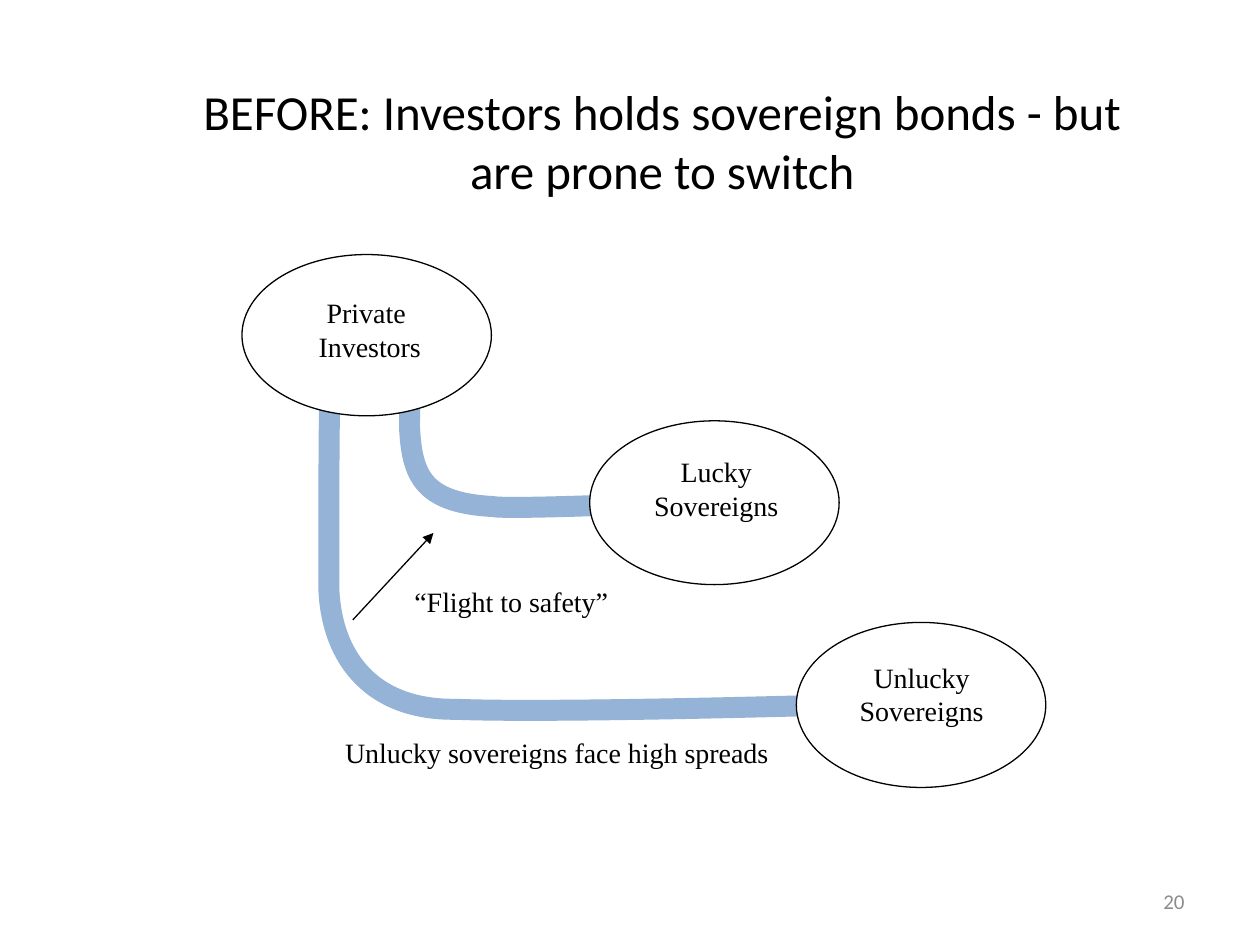
import dataclasses
import itertools

import lxml.etree
import pptx
import pptx.dml.color
import pptx.enum.shapes
import pptx.enum.text
import pptx.oxml.ns
import pptx.util

ALIGN = pptx.enum.text.PP_ALIGN
ANCHOR = pptx.enum.text.MSO_ANCHOR
qualified = pptx.oxml.ns.qn


def rgb(value):
    return pptx.dml.color.RGBColor.from_string(value)


@dataclasses.dataclass(frozen=True)
class Theme:
    ink: str = "000000"
    paper: str = "FFFFFF"
    pipe: str = "95B3D7"
    muted: str = "8C8C8C"
    heading_font: str = "Calibri"
    label_font: str = "Times New Roman"
    title_size: int = 28
    label_size: int = 16
    number_size: int = 12
    outline_width: float = 0.75
    pipe_width: int = 12


THEME = Theme()
COLUMNS, ROWS = 100, 75  # square cells over the whole slide


@dataclasses.dataclass(frozen=True)
class Box:
    """An area measured in grid cells."""
    left: float
    top: float
    width: float
    height: float
    cell: int

    def inner(self, left, top, width, height):
        return Box(self.left + left, self.top + top, width, height, self.cell)

    def point(self, column, row):
        return (round((self.left + column) * self.cell),
                round((self.top + row) * self.cell))

    def frame(self):
        return (*self.point(0, 0), round(self.width * self.cell),
                round(self.height * self.cell))


def write_text(shape, text, size, font, color, align, anchor=ANCHOR.TOP):
    frame = shape.text_frame
    frame.word_wrap = True
    frame.vertical_anchor = anchor
    frame.text = text
    paragraph = frame.paragraphs[0]
    paragraph.alignment = align
    styles = {"size": pptx.util.Pt(size), "name": font}
    for run in paragraph.runs:
        for name, value in styles.items():
            setattr(run.font, name, value)
        run.font.color.rgb = rgb(color)


def set_line(line, color, width):
    line.color.rgb = rgb(color)
    line.width = pptx.util.Pt(width)


def add_label(slide, box, text, align=ALIGN.LEFT):
    label = slide.shapes.add_textbox(*box.frame())
    write_text(label, text, THEME.label_size, THEME.label_font, THEME.ink, align)


def add_party(slide, box, label_box, text):
    """An oval with its centred label."""
    oval = slide.shapes.add_shape(
        pptx.enum.shapes.MSO_SHAPE.OVAL, *box.frame())
    oval.shadow.inherit = False
    oval.fill.solid()
    oval.fill.fore_color.rgb = rgb(THEME.paper)
    set_line(oval.line, THEME.ink, THEME.outline_width)
    add_label(slide, label_box, text, ALIGN.CENTER)


def add_pipe(slide, box, points):
    """A thick curve: a start, then three points for each Bezier segment."""
    start, *rest = itertools.starmap(box.point, points)
    builder = slide.shapes.build_freeform(*start)
    builder.add_line_segments(rest, close=False)
    pipe = builder.convert_to_shape()
    pipe.shadow.inherit = False
    pipe.fill.background()
    set_line(pipe.line, THEME.pipe, THEME.pipe_width)

    # Gather each three straight segments into one curve
    path = next(pipe.element.iter(qualified("a:path")))
    segments = path.findall(qualified("a:lnTo"))
    for first in range(0, len(segments), 3):
        curve = lxml.etree.SubElement(path, qualified("a:cubicBezTo"))
        for segment in segments[first:first + 3]:
            curve.append(segment[0])
            path.remove(segment)


def add_arrow(slide, start, end):
    arrow = slide.shapes.add_connector(
        pptx.enum.shapes.MSO_CONNECTOR.STRAIGHT, *start, *end)
    set_line(arrow.line, THEME.ink, THEME.outline_width)
    properties = arrow.element.spPr
    line = properties.find(qualified("a:ln"))
    lxml.etree.SubElement(line, qualified("a:tailEnd"), type="triangle")
    lxml.etree.SubElement(properties, qualified("a:effectLst"))


def add_title(slide, box):
    title = slide.shapes.title
    title.left, title.top, title.width, title.height = box.frame()
    write_text(title,
               "BEFORE: Investors holds sovereign bonds - but are prone to switch",
               THEME.title_size, THEME.heading_font, THEME.ink, ALIGN.CENTER)


def add_diagram(slide, box):
    # Pipes lie behind the ovals
    pipes = [
        [(7.2, 12), (7.1, 12), (7.1, 22.2), (7.1, 26.5), (7.2, 31.6),
         (10, 36.4), (17.2, 36.3), (24.4, 36.6), (45.7, 36), (45.6, 36)],
        [(13.7, 7.2), (13.5, 7.3), (13.5, 13.6), (13.5, 13.9), (13.7, 17.8),
         (14.6, 19.9), (20.1, 20.2), (21, 20.4), (29, 20.1), (28.9, 20.1)],
    ]
    for points in pipes:
        add_pipe(slide, box, points)

    # Parties: oval, label area, text
    parties = [
        ((0.2, 0.2, 19.8, 12.8), (1.5, 3, 17.7, 7.4), "Private \vInvestors"),
        ((27.8, 13.4, 19.8, 13), (29, 15.6, 17.7, 7.9), "Lucky\vSovereigns"),
        ((44.2, 29.4, 19.8, 13.1), (45.3, 31.9, 17.7, 8.2),
         "Unlucky\vSovereigns"),
    ]
    for oval, label, text in parties:
        add_party(slide, box.inner(*oval), box.inner(*label), text)

    # Flight arrow and notes
    add_arrow(slide, box.point(9, 29.2), box.point(15.4, 22.3))
    add_label(slide, box.inner(12.9, 25.9, 23.9, 7), "“Flight to safety”")
    add_label(slide, box.inner(7.4, 37.9, 39.1, 4.5),
              "Unlucky sovereigns face high spreads")


def add_page_number(slide, box):
    number = slide.shapes.add_textbox(*box.frame())
    write_text(number, "20", THEME.number_size, THEME.heading_font,
               THEME.muted, ALIGN.RIGHT, ANCHOR.MIDDLE)


def main():
    presentation = pptx.Presentation()
    presentation.slide_width = pptx.util.Inches(10)
    presentation.slide_height = pptx.util.Inches(7.5)
    slide = presentation.slides.add_slide(presentation.slide_layouts[5])
    page = Box(0, 0, COLUMNS, ROWS, presentation.slide_width // COLUMNS)

    add_title(slide, page.inner(14.2, 6, 76.7, 10.4))
    add_diagram(slide, page.inner(19, 20, 64, 43))
    add_page_number(slide, page.inner(71.7, 69.5, 23.3, 4))
    presentation.save("out.pptx")


if __name__ == "__main__":
    main()
